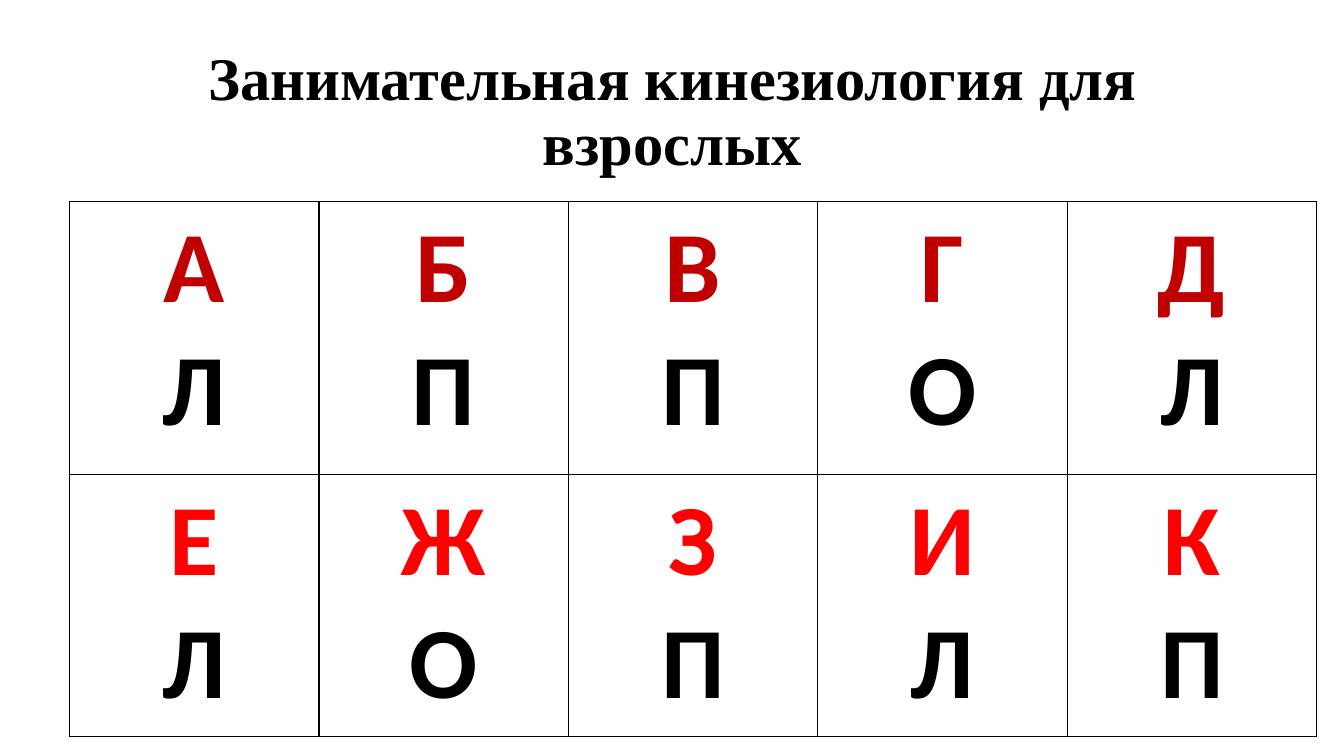
from lxml.etree import SubElement
from pptx import Presentation
from pptx.dml.color import RGBColor
from pptx.enum.text import MSO_ANCHOR, PP_ALIGN
from pptx.oxml.ns import qn
from pptx.util import Inches, Pt

BLACK = RGBColor(0x00, 0x00, 0x00)
DARK_RED = RGBColor(0xC0, 0x00, 0x00)
RED = RGBColor(0xFF, 0x00, 0x00)

TITLE = "Занимательная кинезиология для взрослых"
# Each pair is a letter to say and the hand to raise.
LETTER_ROWS = [
    (DARK_RED, Inches(2.71), ["АЛ", "БП", "ВП", "ГО", "ДЛ"]),
    (RED, Inches(2.6), ["ЕЛ", "ЖО", "ЗП", "ИЛ", "КП"]),
]


class Slide:
    title_font = "Times New Roman"
    letter_font = "Calibri"
    border_width = Pt(1)

    def __init__(self, deck):
        self.page = deck.slides.add_slide(deck.slide_layouts[6])

    def style(self, para, name, size, color):
        para.alignment = PP_ALIGN.CENTER
        font = para.font
        font.name, font.size, font.bold = name, Pt(size), True
        font.color.rgb = color

    def title(self, text, left, top, width, height):
        box = self.page.shapes.add_textbox(left, top, width, height)
        frame = box.text_frame
        frame.word_wrap = True
        frame.vertical_anchor = MSO_ANCHOR.MIDDLE
        para = frame.paragraphs[0]
        para.text = text
        para.line_spacing = 0.9
        self.style(para, self.title_font, 43.2, BLACK)

    def border(self, cell):
        properties = cell._tc.get_or_add_tcPr()
        for side in ("lnL", "lnR", "lnT", "lnB"):
            line = SubElement(properties, qn(f"a:{side}"), w=str(self.border_width))
            fill = SubElement(line, qn("a:solidFill"))
            SubElement(fill, qn("a:srgbClr"), val=str(BLACK))

    def letter_table(self, rows, left, top, width):
        column_count = len(rows[0][2])
        height = sum(row_height for _, row_height, _ in rows)
        table = self.page.shapes.add_table(
            len(rows), column_count, left, top, width, height).table
        table.first_row = table.horz_banding = False
        for row, (color, row_height, pairs) in zip(table.rows, rows):
            row.height = row_height
            for cell, pair in zip(row.cells, pairs):
                self.border(cell)
                cell.fill.background()
                cell.text = "\n".join(pair)
                for para, letter_color in zip(cell.text_frame.paragraphs, (color, BLACK)):
                    self.style(para, self.letter_font, 72, letter_color)


def main():
    deck = Presentation()
    deck.slide_width, deck.slide_height = Inches(13.33), Inches(7.5)
    slide = Slide(deck)
    slide.title(TITLE, Inches(0.92), Inches(0.4), Inches(11.5), Inches(1.45))
    slide.letter_table(LETTER_ROWS, Inches(0.69), Inches(2), Inches(12.37))
    deck.save("out.pptx")


if __name__ == "__main__":
    main()
